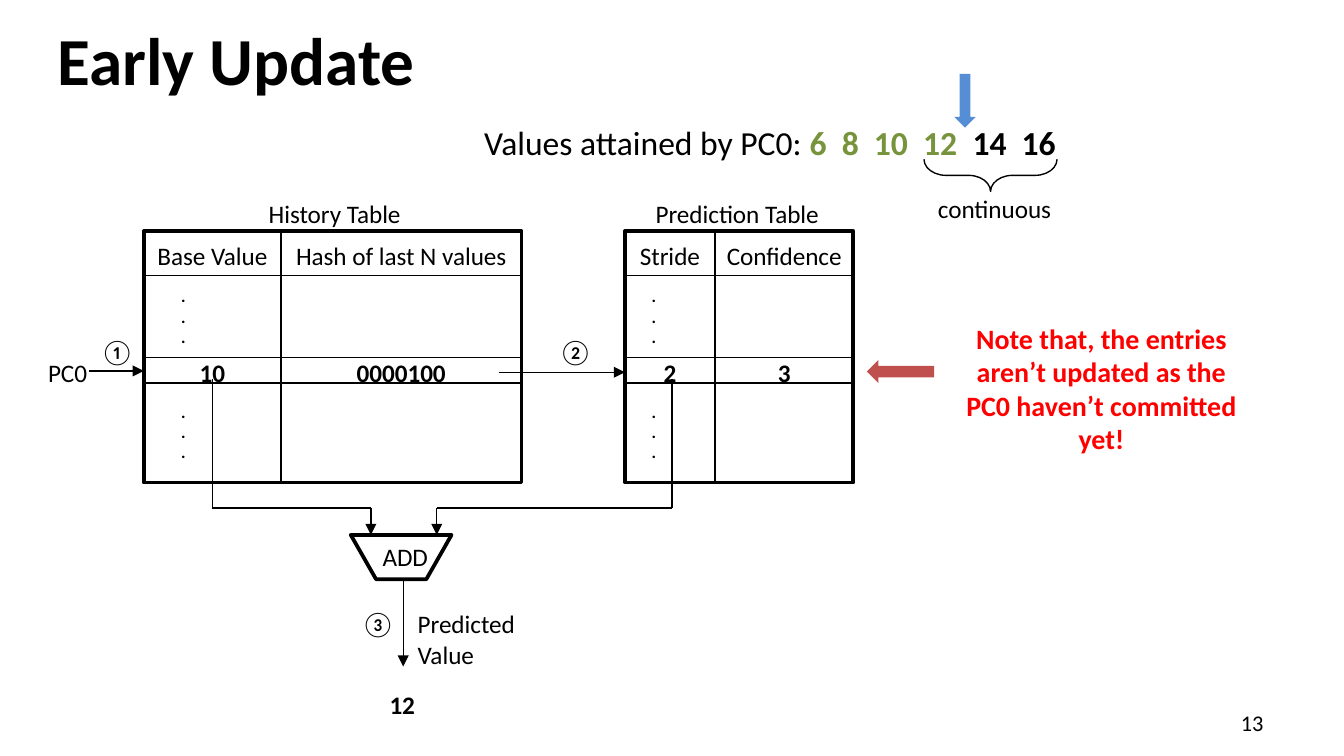
from dataclasses import dataclass

from lxml.etree import SubElement
from pptx import Presentation
from pptx.dml.color import RGBColor
from pptx.enum.shapes import MSO_CONNECTOR, MSO_SHAPE
from pptx.enum.text import MSO_ANCHOR, PP_ALIGN
from pptx.oxml.ns import qn
from pptx.util import Inches, Pt


@dataclass(frozen=True)
class Theme:
    font: str = "Calibri"
    black: str = "000000"
    white: str = "FFFFFF"
    green: str = "77933C"
    blue: str = "558ED5"
    brick: str = "C0504D"
    red: str = "FF0000"
    title: float = 36
    sequence: float = 18
    note: float = 15
    label: float = 13.5
    number: float = 12
    dots: float = 9
    thin: float = 0.75
    thick: float = 2


THEME = Theme()
LEFT, CENTER, RIGHT = PP_ALIGN.LEFT, PP_ALIGN.CENTER, PP_ALIGN.RIGHT
SLIDE_WIDTH = 10
SLIDE_HEIGHT = SLIDE_WIDTH * 9 / 16

# Both tables share their rows; columns are (heading, value, width)
TABLE_TOP, TABLE_HEIGHT = 1.72, 1.87
ROW_LINES = (2.05, 2.66, 2.85)
HEADING_TOP, VALUE_TOP = 1.74, 2.61
DOT_TOPS = (2.08, 2.94)
TABLES = [
    {"left": 1.07, "dots_left": 1.25,
     "columns": [("Base Value", "10", 1.02), ("Hash of last N values", "0000100", 1.79)]},
    {"left": 4.65, "dots_left": 4.75,
     "columns": [("Stride", "2", 0.67), ("Confidence", "3", 1.03)]},
]

# (from, to, arrow at end)
ADDER_TOP, BUS_Y = 3.98, 3.78
LINES = [
    ((0.66, 2.76), (1.07, 2.76), True),
    ((3.71, 2.77), (4.65, 2.77), True),
    ((1.58, 2.82), (1.58, BUS_Y), False),
    ((1.58, BUS_Y), (2.76, BUS_Y), False),
    ((2.76, BUS_Y), (2.76, ADDER_TOP), True),
    ((5, 2.82), (5, BUS_Y), False),
    ((3.25, BUS_Y), (5, BUS_Y), False),
    ((3.25, BUS_Y), (3.25, ADDER_TOP), True),
    ((3, 4.32), (3, 4.96), True),
]

# kind, box, format
SHAPES = [
    (MSO_SHAPE.TRAPEZOID, (2.61, ADDER_TOP, 0.75, 0.33),
     {"line": THEME.thick, "rotation": 180, "adjustments": [0.57]}),
    (MSO_SHAPE.RIGHT_BRACE, (7.25, 0.81, 0.24, 0.99),
     {"line": THEME.thin, "rotation": 90, "adjustments": [0.68, 0.5]}),
    (MSO_SHAPE.DOWN_ARROW, (7.1, 0.55, 0.16, 0.4), {"fill": THEME.blue}),
    (MSO_SHAPE.LEFT_ARROW, (6.45, 2.68, 0.5, 0.17), {"fill": THEME.brick}),
]

# text, box, format
TEXTS = [
    ("Early Update", (0.33, 0.06, 9.33, 0.75),
     {"size": THEME.title, "bold": True, "anchor": MSO_ANCHOR.MIDDLE}),
    ("History Table", (1.77, 1.43, 1.44, 0.33), {"align": CENTER}),
    ("Prediction Table", (4.69, 1.43, 1.59, 0.33), {"align": CENTER}),
    ("PC0", (0.26, 2.61, 0.5, 0.33), {"wrap": False}),
    ("①", (0.65, 2.45, 0.45, 0.33), {"wrap": False}),
    ("②", (4.06, 2.45, 0.45, 0.33), {"wrap": False}),
    ("③", (2.59, 4.48, 0.45, 0.33), {"wrap": False}),
    ("ADD", (2.64, ADDER_TOP, 0.75, 0.33), {"align": CENTER}),
    ("Predicted Value", (3.01, 4.48, 1.36, 0.56), {}),
    ("12", (2.8, 5.08, 0.41, 0.33), {"bold": True, "wrap": False}),
    ("continuous", (6.87, 1.39, 1.06, 0.33), {"align": CENTER, "wrap": False}),
    ("Note that, the entries aren’t updated as the PC0 haven’t committed yet!",
     (6.99, 2.34, 2.41, 1.11),
     {"size": THEME.note, "bold": True, "color": THEME.red, "align": CENTER}),
    ("13", (7.17, 5.25, 2.33, 0.26),
     {"size": THEME.number, "align": RIGHT, "anchor": MSO_ANCHOR.MIDDLE}),
]
SEQUENCE_BOX = (1.7, 0.86, 8.06, 0.4)
SEQUENCE = [
    ("Values attained by PC0: ", THEME.black, False),
    ("6  8  10  12", THEME.green, True),
    ("  14  16", THEME.black, True),
]


def add_text(slide, paragraphs, box, size=THEME.label, color=THEME.black, bold=False,
             align=LEFT, anchor=MSO_ANCHOR.TOP, wrap=True, side_margin=0.1, spacing=None):
    """Paragraphs is a string, or a list of lists of (text, color, bold) runs."""
    if isinstance(paragraphs, str):
        paragraphs = [[(paragraphs, color, bold)]]
    frame = slide.shapes.add_textbox(*map(Inches, box)).text_frame
    frame_format = {"word_wrap": wrap, "vertical_anchor": anchor,
                    "margin_left": Inches(side_margin), "margin_right": Inches(side_margin)}
    for name, value in frame_format.items():
        setattr(frame, name, value)
    for index, runs in enumerate(paragraphs):
        paragraph = frame.add_paragraph() if index else frame.paragraphs[0]
        paragraph.alignment = align
        for text, run_color, run_bold in runs:
            run = paragraph.add_run()
            run.text = text
            for name, value in {"name": THEME.font, "size": Pt(size), "bold": run_bold}.items():
                setattr(run.font, name, value)
            run.font.color.rgb = RGBColor.from_string(run_color)
            if spacing is not None:
                run.font._element.set("spc", str(spacing))


def add_shape(slide, kind, box, fill=None, line=None, rotation=0, adjustments=()):
    shape = slide.shapes.add_shape(kind, *map(Inches, box))
    shape.shadow.inherit = False
    shape.rotation = rotation
    for index, value in enumerate(adjustments):
        shape.adjustments[index] = value
    if fill:
        shape.fill.solid()
        shape.fill.fore_color.rgb = RGBColor.from_string(fill)
    else:
        shape.fill.background()
    if line:
        shape.line.color.rgb = RGBColor.from_string(THEME.black)
        shape.line.width = Pt(line)
    else:
        shape.line.fill.background()


def add_line(slide, start, end, arrow=False):
    connector = slide.shapes.add_connector(MSO_CONNECTOR.STRAIGHT, *map(Inches, start + end))
    connector.line.color.rgb = RGBColor.from_string(THEME.black)
    connector.line.width = Pt(THEME.thin)
    if arrow:
        SubElement(connector.line._get_or_add_ln(), qn("a:tailEnd"), type="triangle")
    SubElement(connector._element.spPr, qn("a:effectLst"))


def add_lookup_grid(slide, left, dots_left, columns):
    """Draw a framed grid whose highlighted row is crossed by the data-flow lines."""
    width = sum(column[2] for column in columns)
    add_shape(slide, MSO_SHAPE.RECTANGLE, (left, TABLE_TOP, width, TABLE_HEIGHT),
              fill=THEME.white, line=THEME.thick)
    for y in ROW_LINES:
        add_line(slide, (left, y), (left + width, y))
    x = left
    for heading, value, column_width in columns:
        if x > left:
            add_line(slide, (x, TABLE_TOP), (x, TABLE_TOP + TABLE_HEIGHT))
        for text, top, bold in ((heading, HEADING_TOP, False), (value, VALUE_TOP, True)):
            add_text(slide, text, (x, top, column_width, 0.33), bold=bold,
                     align=CENTER, side_margin=0)
        x += column_width
    for top in DOT_TOPS:
        add_text(slide, [[(".", THEME.black, True)]] * 3, (dots_left, top, 0.2, 0.56),
                 size=THEME.dots, wrap=False, spacing=-220)


def main():
    presentation = Presentation()
    presentation.slide_width = Inches(SLIDE_WIDTH)
    presentation.slide_height = Inches(SLIDE_HEIGHT)
    slide = presentation.slides.add_slide(presentation.slide_layouts[6])
    for table in TABLES:
        add_lookup_grid(slide, **table)
    for start, end, arrow in LINES:
        add_line(slide, start, end, arrow)
    for kind, box, formats in SHAPES:
        add_shape(slide, kind, box, **formats)
    for text, box, formats in TEXTS:
        add_text(slide, text, box, **formats)
    add_text(slide, [SEQUENCE], SEQUENCE_BOX, size=THEME.sequence, align=CENTER)
    presentation.save("out.pptx")


if __name__ == "__main__":
    main()
